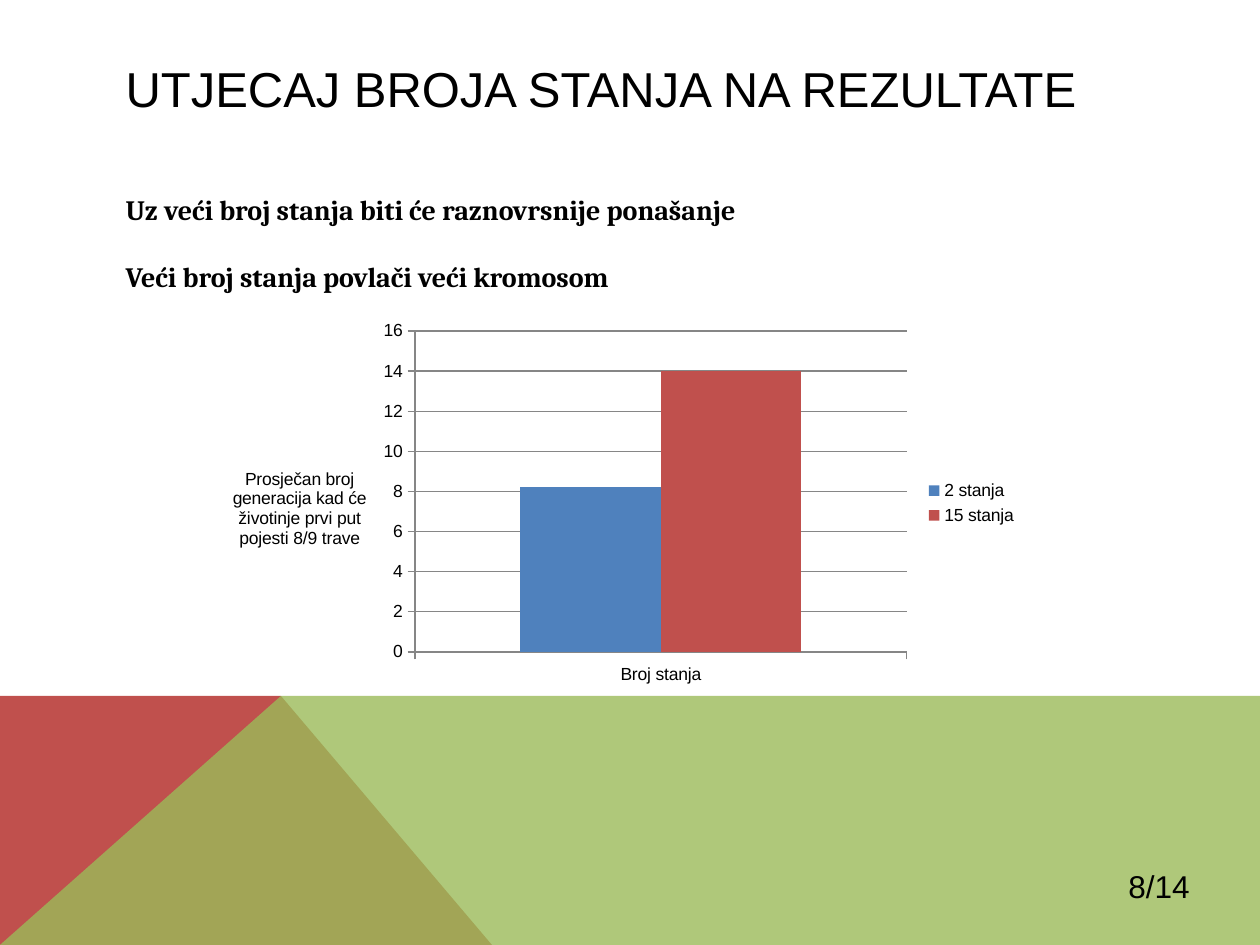
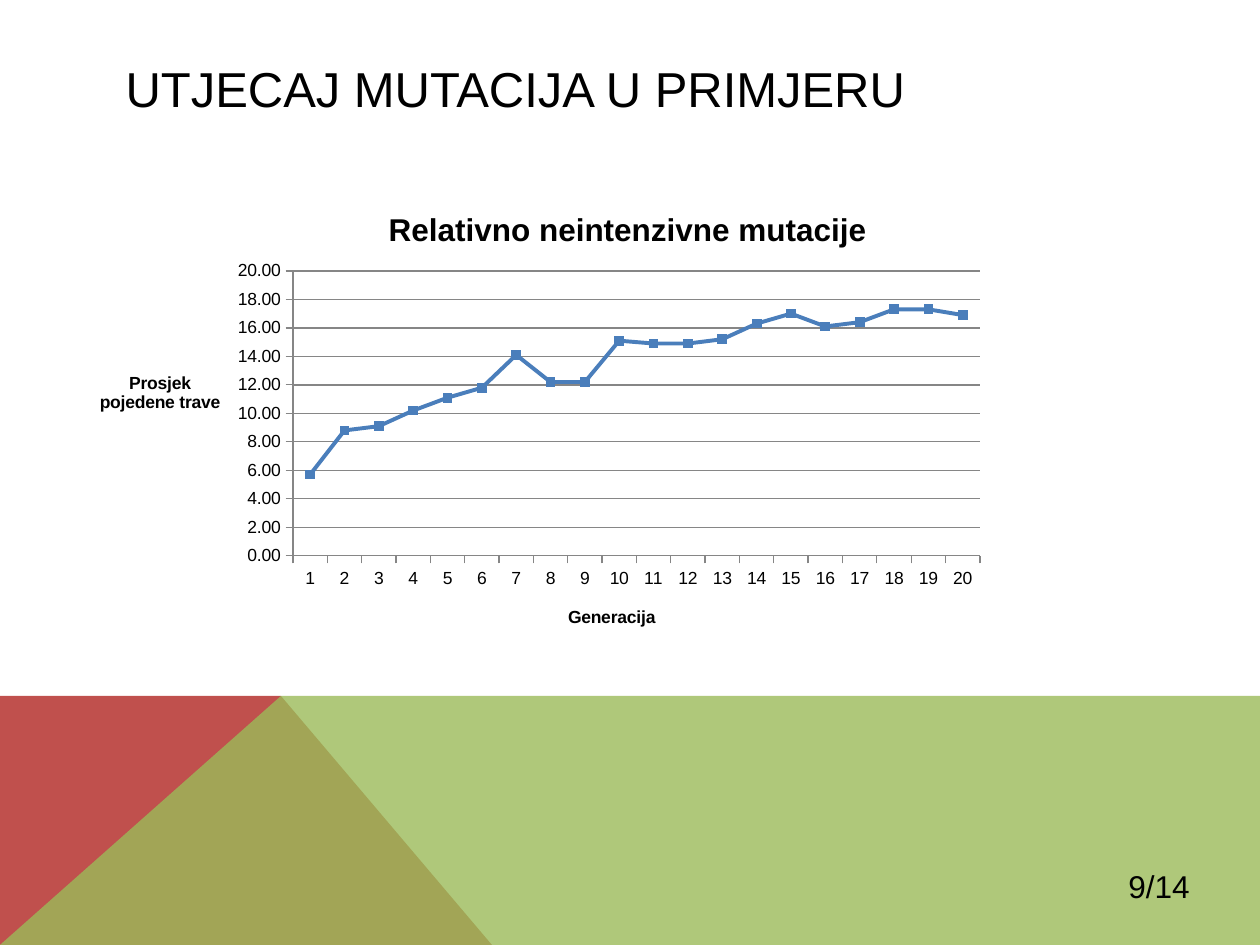
from lxml import etree
from pptx import Presentation
from pptx import util as u
from pptx.chart.data import CategoryChartData
from pptx.dml.color import RGBColor
from pptx.enum import chart as kinds, text
from pptx.oxml.ns import qn

EMU_PER_PX = 914400 / 126
WIDTH, HEIGHT = 1260, 945
BAND_TOP = 696
PAGE_COUNT = 14
COLOURS = {
    "text": "000000",
    "red": "C0504D",
    "green": "9BBB59",
    "blue": "4F81BD",
    "line": "4A7EBB",
    "grid": "868686",
}


def px(length):
    return u.Emu(round(length * EMU_PER_PX))


def rgb(name):
    return RGBColor.from_string(COLOURS[name])


def place(shape, left, top, width, height):
    shape.left, shape.top = px(left), px(top)
    shape.width, shape.height = px(width), px(height)


def set_font(font, size, name="Arial", bold=False):
    font.size, font.name, font.bold = u.Pt(size), name, bold
    font.color.rgb = rgb("text")


# Shared parts of the slides
def add_band_part(slide, master, index, points, colour, opacity=None):
    """Draw a polygon and move it behind everything on the master."""
    builder = slide.shapes.build_freeform(*points[0], scale=EMU_PER_PX)
    builder.add_line_segments(points[1:], close=True)
    shape = builder.convert_to_shape()
    shape.shadow.inherit = False
    shape.fill.solid()
    shape.fill.fore_color.rgb = rgb(colour)
    shape.line.fill.background()
    if opacity:
        colour_element = shape.element.find(".//" + qn("a:srgbClr"))
        etree.SubElement(colour_element, qn("a:alpha"), val=str(opacity * 1000))
    shape.element.find(".//" + qn("p:cNvPr")).set("id", str(100 + index))
    master.shapes.element.insert(2 + index, shape.element)


def add_band(slide, master):
    peak = (281, BAND_TOP)
    add_band_part(slide, master, 0,
                  [(0, HEIGHT), (0, BAND_TOP), peak, (492, HEIGHT)], "red")
    add_band_part(slide, master, 1,
                  [(0, HEIGHT), peak, (WIDTH, BAND_TOP), (WIDTH, HEIGHT)],
                  "green", opacity=80)


def add_slide(presentation, layout_index, title, page):
    slide = presentation.slides.add_slide(presentation.slide_layouts[layout_index])
    heading = slide.shapes.title
    place(heading, 113, 50, 1036, 76)
    heading.text_frame.text = title
    heading.text_frame.vertical_anchor = text.MSO_ANCHOR.MIDDLE
    paragraph = heading.text_frame.paragraphs[0]
    paragraph.alignment = text.PP_ALIGN.LEFT
    set_font(paragraph.font, 28)

    number = slide.shapes.add_textbox(px(1116), px(861), px(118), px(50))
    number.text_frame.word_wrap = True
    number.text_frame.text = f"{page}/{PAGE_COUNT}"
    set_font(number.text_frame.paragraphs[0].font, 18)
    return slide


def fill_body(slide, lines):
    body = slide.placeholders[1]
    place(body, 113, 151, 1036, 493)
    frame = body.text_frame
    frame.auto_size = text.MSO_AUTO_SIZE.NONE
    frame.margin_top = px(42)
    frame.text = "\n".join(lines)
    for index, paragraph in enumerate(frame.paragraphs):
        paragraph.space_before = u.Pt(19 if index else 0)
        set_font(paragraph.font, 16, "Cambria", bold=True)
        properties = paragraph._p.get_or_add_pPr()
        properties.set("marL", "0")
        properties.set("indent", "0")
        etree.SubElement(properties, qn("a:buNone")) if properties.find(
            qn("a:defRPr")) is None else properties.find(
            qn("a:defRPr")).addprevious(etree.Element(qn("a:buNone")))


# Charts
def set_layout(element, frame, left, top, width=None, height=None):
    """Fix a chart part at a place given in slide px."""
    layout = element.find(qn("c:layout"))
    if layout is None:
        layout = etree.Element(qn("c:layout"))
        element.insert(0 if element.tag == qn("c:plotArea") else 1, layout)
    manual = etree.SubElement(layout, qn("c:manualLayout"))
    values = {"xMode": "edge", "yMode": "edge",
              "x": px(left) - frame.left, "y": px(top) - frame.top}
    if width:
        values = {"layoutTarget": "inner", **values, "w": px(width), "h": px(height)}
    for tag, value in values.items():
        if tag in "xw":
            value = round(value / frame.width, 4)
        elif tag in "yh":
            value = round(value / frame.height, 4)
        etree.SubElement(manual, qn("c:" + tag), val=str(value))


def set_title(title, frame, wording, left, top, size=10, bold=True):
    title.text_frame.text = wording
    for paragraph in title.text_frame.paragraphs:
        paragraph.alignment = text.PP_ALIGN.CENTER
        set_font(paragraph.font, size, bold=bold)
    body = title.element.find(".//" + qn("a:bodyPr"))
    body.set("rot", "0")
    body.set("vert", "horz")
    set_layout(title.element, frame, left, top)


def add_chart(slide, kind, box, plot_box, categories, series, top_value,
              number_format="General"):
    data = CategoryChartData(number_format=number_format)
    data.categories = categories
    for name, values in series:
        data.add_series(name, values)
    frame = slide.shapes.add_chart(kind, *map(px, box), data)
    chart = frame.chart
    chart.has_title = chart.has_legend = False
    set_font(chart.font, 10)
    set_layout(chart.element.find(".//" + qn("c:plotArea")), frame, *plot_box)

    value_axis = chart.value_axis
    value_axis.minimum_scale, value_axis.maximum_scale = 0, top_value
    value_axis.major_unit = 2
    value_axis.has_major_gridlines = True
    value_axis.tick_labels.number_format = number_format
    value_axis.tick_labels.number_format_is_linked = False
    for axis in (value_axis, chart.category_axis):
        axis.major_tick_mark = kinds.XL_TICK_MARK.OUTSIDE
    for part in (value_axis, value_axis.major_gridlines, chart.category_axis):
        part.format.line.color.rgb = rgb("grid")
        part.format.line.width = u.Pt(0.75)
    return frame


def add_states_chart(slide):
    frame = add_chart(slide, kinds.XL_CHART_TYPE.COLUMN_CLUSTERED,
                      (203, 314, 827, 378), (415, 331, 492, 321),
                      ["Broj stanja"],
                      [("2 stanja", [8.2]), ("15 stanja", [14])], 16)
    chart = frame.chart
    set_title(chart.value_axis.axis_title, frame,
              "Prosječan broj\ngeneracija kad će\nživotinje prvi put\npojesti 8/9 trave",
              229, 463, bold=False)
    chart.has_legend = True
    chart.legend.position = kinds.XL_LEGEND_POSITION.RIGHT
    chart.legend.include_in_layout = False
    plot = chart.plots[0]
    plot.gap_width, plot.overlap, plot.vary_by_categories = 150, 0, False
    for series, colour in zip(plot.series, ("blue", "red")):
        series.format.fill.solid()
        series.format.fill.fore_color.rgb = rgb(colour)


def add_mutation_chart(slide):
    averages = [5.7, 8.8, 9.1, 10.2, 11.1, 11.8, 14.1, 12.2, 12.2, 15.1,
                14.9, 14.9, 15.2, 16.3, 17, 16.1, 16.4, 17.3, 17.3, 16.9]
    generations = [str(number) for number in range(1, len(averages) + 1)]
    frame = add_chart(slide, kinds.XL_CHART_TYPE.LINE_MARKERS,
                      (64, 183, 935, 466), (293, 271, 687, 285),
                      generations, [("Series 1", averages)], 20, "0.00")
    chart = frame.chart
    chart.has_title = True
    set_title(chart.chart_title, frame, "Relativno neintenzivne mutacije",
              383, 203, size=18)
    set_title(chart.value_axis.axis_title, frame, "Prosjek\npojedene trave", 96, 367)
    set_title(chart.category_axis.axis_title, frame, "Generacija", 565, 602)
    chart.plots[0].vary_by_categories = False
    series = chart.plots[0].series[0]
    series.smooth = False
    series.format.line.color.rgb = rgb("line")
    series.format.line.width = u.Pt(2.25)
    marker = series.marker
    marker.style, marker.size = kinds.XL_MARKER_STYLE.SQUARE, 5
    marker.format.fill.solid()
    marker.format.fill.fore_color.rgb = rgb("blue")
    marker.format.line.color.rgb = rgb("line")


def main():
    presentation = Presentation()
    presentation.slide_width, presentation.slide_height = px(WIDTH), px(HEIGHT)

    # Influence of the number of states
    states = add_slide(presentation, 1, "UTJECAJ BROJA STANJA NA REZULTATE", 8)
    add_band(states, presentation.slide_master)
    fill_body(states, ["Uz veći broj stanja biti će raznovrsnije ponašanje",
                       "Veći broj stanja povlači veći kromosom"])
    add_states_chart(states)

    # Influence of mutations
    mutations = add_slide(presentation, 5, "UTJECAJ MUTACIJA U PRIMJERU", 9)
    add_mutation_chart(mutations)

    presentation.save("out.pptx")


if __name__ == "__main__":
    main()
